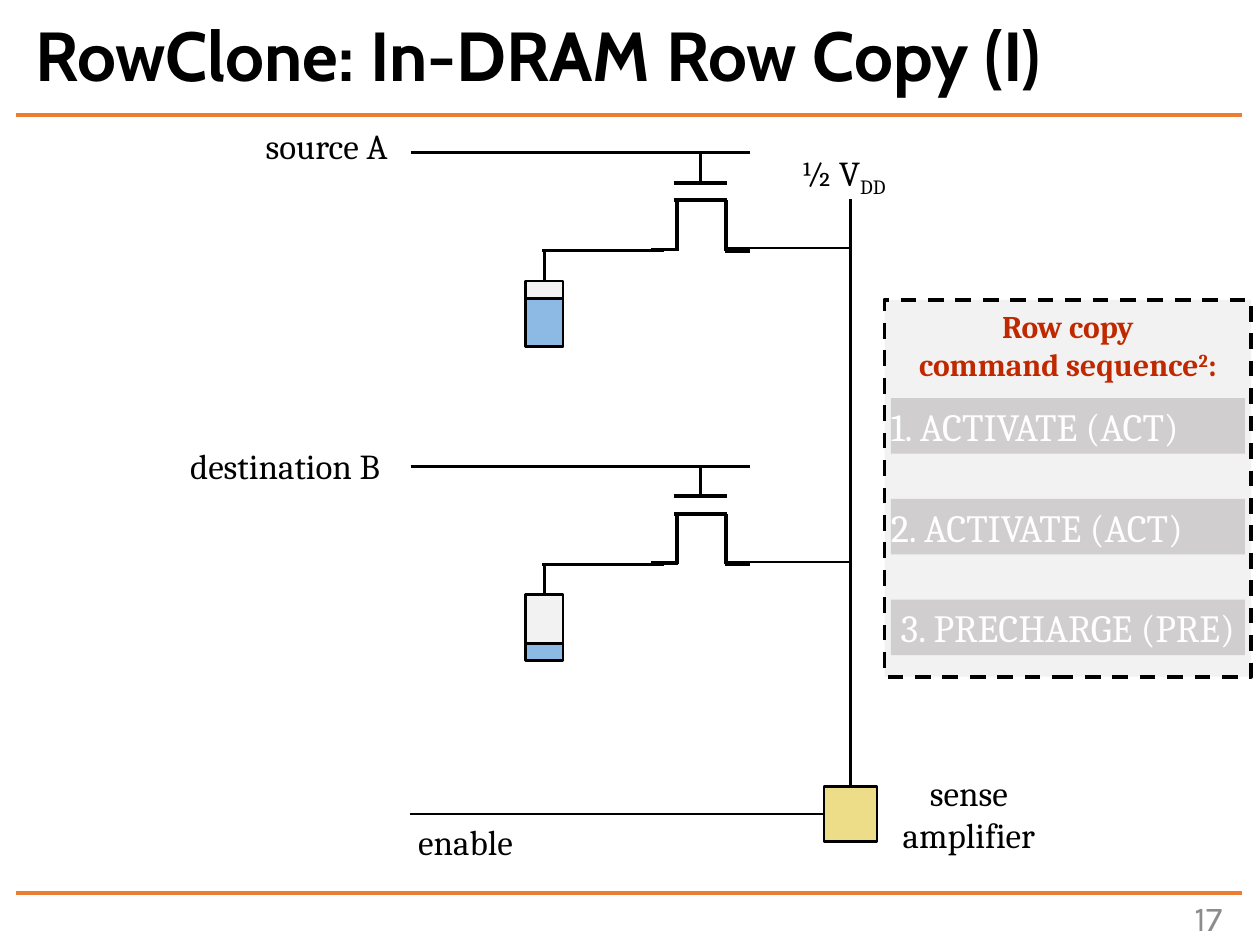
from lxml.etree import SubElement
from pptx import Presentation
from pptx.dml.color import RGBColor
from pptx.enum.dml import MSO_LINE
from pptx.enum.shapes import MSO_CONNECTOR, MSO_SHAPE
from pptx.enum.text import MSO_ANCHOR, PP_ALIGN
from pptx.oxml.ns import qn
from pptx.util import Inches, Pt

BLACK, WHITE, ORANGE = "000000", "FFFFFF", "ED7D31"
EMPTY, CHARGE, AMP, STEP, RED = "F2F2F2", "8DBAE4", "EEDD88", "D0CECE", "C02900"
TOP, LEFT = 0, 1
BITLINE_X = 6.75


def rgb(value):
    return RGBColor.from_string(value)


class Deck:
    body = {"name": "Cambria", "size": Pt(20), "bold": False}

    def __init__(self, slide):
        self.s = slide

    def fill_text(self, sp, lines, color=BLACK, align=PP_ALIGN.LEFT,
                  anchor=MSO_ANCHOR.TOP, wrap=True, margin=None, spacing=None, **font):
        tf = sp.text_frame
        tf.word_wrap = wrap
        tf.vertical_anchor = anchor
        if margin is not None:
            for side in ("left", "top", "right", "bottom"):
                setattr(tf, f"margin_{side}", Inches(margin))
        for i, line in enumerate(lines):
            p = tf.paragraphs[0] if i == 0 else tf.add_paragraph()
            p.alignment = align
            p.line_spacing = spacing
            for text, baseline in [(line, 0)] if isinstance(line, str) else line:
                r = p.add_run()
                r.text = text
                for key, value in {**self.body, **font}.items():
                    setattr(r.font, key, value)
                r.font.color.rgb = rgb(color)
                if baseline:
                    r.font._element.set("baseline", str(baseline * 1000))

    def text(self, x, y, w, h, lines, **style):
        sp = self.s.shapes.add_textbox(Inches(x), Inches(y), Inches(w), Inches(h))
        self.fill_text(sp, lines, **style)
        return sp

    def box(self, x, y, w, h, fill, width=1.5, dash=None):
        sp = self.s.shapes.add_shape(
            MSO_SHAPE.RECTANGLE, Inches(x), Inches(y), Inches(w), Inches(h))
        sp.shadow.inherit = False
        sp.fill.solid()
        sp.fill.fore_color.rgb = rgb(fill)
        if width:
            sp.line.color.rgb = rgb(BLACK)
            sp.line.width = Pt(width)
            sp.line.dash_style = dash
        else:
            sp.line.fill.background()
        return sp

    def line(self, x1, y1, x2, y2, width=1.5, color=BLACK, end=None):
        cx = self.s.shapes.add_connector(
            MSO_CONNECTOR.STRAIGHT, Inches(x1), Inches(y1), Inches(x2), Inches(y2))
        cx.line.color.rgb = rgb(color)
        cx.line.width = Pt(width)
        SubElement(cx._element.spPr, qn("a:effectLst"))
        if end:
            cx.end_connect(*end)
        return cx

    def cell(self, y, label, label_x, label_y, label_w, charge):
        gate, channel, wire = y + 0.24, y + 0.38, y + 0.78
        cap_y, cap_h = y + 1.02, 0.52
        self.line(3.26, y, 5.95, y)
        self.line(5.56, gate, 5.56, y)
        cap = self.box(4.17, cap_y, 0.3, cap_h, EMPTY)
        self.box(4.17, cap_y + cap_h - charge, 0.3, charge, CHARGE)
        self.line(4.32, wire, 4.32, cap_y, end=(cap, TOP))
        for segment in (
            (5.35, gate, 5.77, gate),
            (5.35, channel, 5.77, channel),
            (5.37, wire, 5.37, channel),
            (5.76, wire, 5.76, channel),
            (5.17, wire - 0.01, 5.38, wire - 0.01),
            (5.75, wire, 5.95, wire),
        ):
            self.line(*segment, width=2.25)
        self.line(4.3, wire, 5.27, wire)
        self.line(5.77, wire - 0.02, BITLINE_X, wire - 0.02)
        self.text(label_x, label_y, label_w, 0.44, [label], wrap=False)


def main():
    prs = Presentation()
    prs.slide_width, prs.slide_height = Inches(10), Inches(7.5)
    deck = Deck(prs.slides.add_slide(prs.slide_layouts[6]))

    deck.text(0.18, 0.14, 9.73, 0.66, ["RowClone: In-DRAM Row Copy (I)"],
              name="Cabin", size=Pt(39.6), bold=True,
              anchor=MSO_ANCHOR.MIDDLE, spacing=0.9)
    for y in (0.91, 7.09):
        deck.line(0.13, y, 9.86, y, width=2.25, color=ORANGE)
    deck.text(8.72, 7.08, 1.08, 0.4, ["17"], name="Karla", color="8C8C8C",
              align=PP_ALIGN.RIGHT, anchor=MSO_ANCHOR.MIDDLE)

    amp = deck.box(6.54, 6.24, 0.42, 0.44, AMP)
    deck.line(BITLINE_X, 1.58, BITLINE_X, 6.24, end=(amp, TOP))
    deck.line(3.25, 6.46, 6.54, 6.46, end=(amp, LEFT))
    deck.text(6.62, 6.07, 2.14, 0.77, ["sense", "amplifier"], align=PP_ALIGN.CENTER)
    deck.text(3.22, 6.46, 1, 0.44, ["enable"], wrap=False)
    deck.text(6.26, 1.15, 0.97, 0.44, [[("½ V", 0), ("DD", -25)]])

    deck.cell(1.21, "source A", 2.01, 0.94, 1.25, charge=0.38)
    deck.cell(3.7, "destination B", 1.41, 3.48, 1.85, charge=0.13)

    deck.box(7.02, 2.38, 2.91, 2.99, EMPTY, width=2.25, dash=MSO_LINE.DASH)
    deck.text(7.02, 2.39, 2.91, 0.71,
              ["Row copy", [("command sequence", 0), ("2", 30), (":", 0)]],
              color=RED, align=PP_ALIGN.CENTER, size=Pt(18), bold=True)
    steps = (
        ("1. ACTIVATE (ACT)", PP_ALIGN.LEFT),
        ("2. ACTIVATE (ACT)", PP_ALIGN.LEFT),
        ("3. PRECHARGE (PRE)", PP_ALIGN.CENTER),
    )
    for i, (step, align) in enumerate(steps):
        sp = deck.box(7.07, 3.16 + 0.8 * i, 2.81, 0.44, STEP, width=None)
        deck.fill_text(sp, [step], color=WHITE, align=align, size=Pt(22),
                       anchor=MSO_ANCHOR.MIDDLE, margin=0)

    prs.save("out.pptx")


if __name__ == "__main__":
    main()
